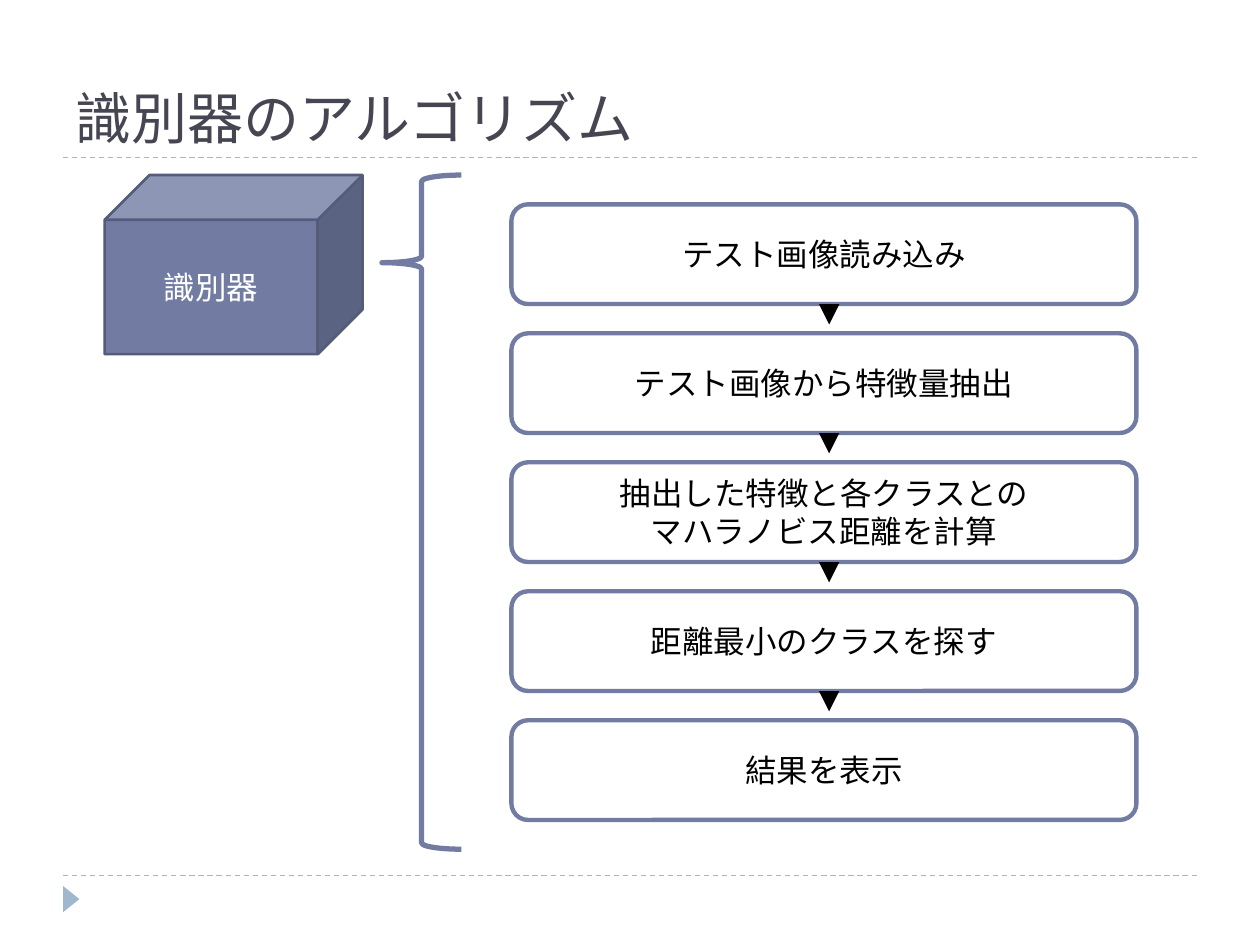
from dataclasses import dataclass

from lxml import etree
from pptx import Presentation
from pptx.dml.color import RGBColor
from pptx.enum.dml import MSO_LINE
from pptx.enum.shapes import MSO_CONNECTOR, MSO_SHAPE
from pptx.enum.text import MSO_ANCHOR, PP_ALIGN
from pptx.oxml.ns import qn
from pptx.util import Cm, Pt

ROUND = MSO_SHAPE.ROUNDED_RECTANGLE
WEDGE = MSO_SHAPE.ISOSCELES_TRIANGLE
BRACE = MSO_SHAPE.LEFT_BRACE
CUBE = MSO_SHAPE.CUBE
LINE = MSO_CONNECTOR.STRAIGHT
DASH = MSO_LINE.DASH
LEFT, CENTER = PP_ALIGN.LEFT, PP_ALIGN.CENTER
MIDDLE, BOTTOM = MSO_ANCHOR.MIDDLE, MSO_ANCHOR.BOTTOM

COLORS = {
    "white": "FFFFFF",
    "black": "000000",
    "title": "464653",
    "main": "727CA3",
    "edge": "545C79",
    "pale": "9FB8CD",
    "rule": "B2B2B2",
}
STEPS = [
    "テスト画像読み込み",
    "テスト画像から特徴量抽出",
    "抽出した特徴と各クラスとの\nマハラノビス距離を計算",
    "距離最小のクラスを探す",
    "結果を表示",
]
PITCH = 2.6


@dataclass
class Box:
    left: float
    top: float
    width: float
    height: float

    def spot(self) -> tuple:
        return Cm(self.left), Cm(self.top), Cm(self.width), Cm(self.height)


def tint(name: str) -> RGBColor:
    return RGBColor.from_string(COLORS[name])


def write(shape, text: str, font="Cabin", size=18, color="black",
          align=CENTER, anchor=MIDDLE) -> None:
    frame = shape.text_frame
    frame.word_wrap = True
    frame.vertical_anchor = anchor
    frame.text = text
    for para in frame.paragraphs:
        para.alignment = align
        for run in para.runs:
            run.font.name = font
            run.font.size = Pt(size)
            run.font.color.rgb = tint(color)


def draw(slide, kind, box: Box, fill=None, line=None, width=1.0, turn=0):
    shape = slide.shapes.add_shape(kind, *box.spot())
    shape.shadow.inherit = False
    shape.rotation = turn
    if fill:
        shape.fill.solid()
        shape.fill.fore_color.rgb = tint(fill)
    else:
        shape.fill.background()
    if line:
        shape.line.color.rgb = tint(line)
        shape.line.width = Pt(width)
    else:
        shape.line.fill.background()
    return shape


def rule(slide, top: float) -> None:
    line = slide.shapes.add_connector(LINE, Cm(1.27), Cm(top), Cm(24.13), Cm(top))
    line.line.color.rgb = tint("rule")
    line.line.width = Pt(0.75)
    line.line.dash_style = DASH
    etree.SubElement(line._element.spPr, qn("a:effectLst"))


def main() -> None:
    deck = Presentation()
    deck.slide_width, deck.slide_height = Cm(25.4), Cm(19.05)
    slide = deck.slides.add_slide(deck.slide_layouts[6])

    for top in (17.65, 3.18):
        rule(slide, top)
    draw(slide, WEDGE, Box(1.17, 17.96, 0.53, 0.33), fill="pale", turn=90)

    title = slide.shapes.add_textbox(*Box(1.27, 0.43, 22.86, 2.74).spot())
    write(title, "識別器のアルゴリズム", font="Roboto Slab", size=32,
          color="title", align=LEFT, anchor=BOTTOM)

    boxes = [Box(10.31, 4.12 + PITCH * i, 12.6, 2.01) for i in range(len(STEPS))]
    for box, text in zip(boxes, STEPS):
        step = draw(slide, ROUND, box, fill="white", line="main", width=2.5)
        write(step, text)
    for box in boxes[:-1]:
        mark = Box(16.51, box.top + box.height, 0.41, 0.41)
        draw(slide, WEDGE, mark, fill="black", turn=180)

    brace = draw(slide, BRACE, Box(7.7, 3.53, 1.6, 13.59), line="main", width=3)
    brace.adjustments[0] = 0.08
    brace.adjustments[1] = 0.13
    cube = draw(slide, CUBE, Box(2.11, 3.53, 5.2, 3.61), fill="main",
                line="edge", width=1.5)
    write(cube, "識別器", color="white")

    deck.save("out.pptx")


if __name__ == "__main__":
    main()
